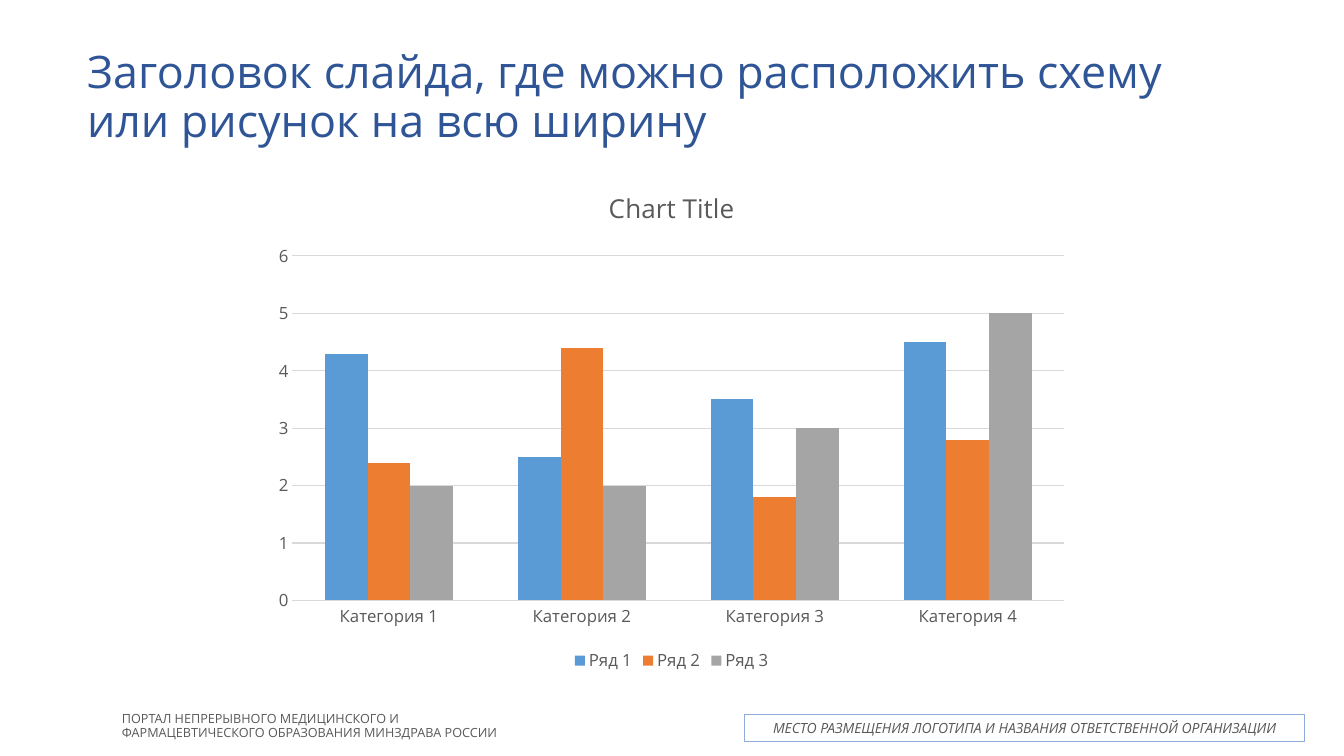
from dataclasses import dataclass

from pptx import Presentation
from pptx import util as u
from pptx.chart import data as chart_data
from pptx.dml import color
from pptx.enum import chart as ch, shapes, text


@dataclass(frozen=True)
class Theme:
    font: str = "Open Sans"
    heading: str = "2F5597"
    muted: str = "595959"
    border: str = "8FAADC"
    grid: str = "D9D9D9"
    series: tuple = ("5B9BD5", "ED7D31", "A5A5A5")
    title_size: float = 32
    chart_title_size: float = 18.6
    label_size: float = 12
    logo_size: float = 10
    portal_size: float = 9
    line_width: float = 0.75


THEME = Theme()


def rgb(value):
    return color.RGBColor.from_string(value)


def apply(target, values):
    for name, value in values.items():
        setattr(target, name, value)


def style_font(font, size, shade, **extra):
    apply(font, {"name": THEME.font, "size": u.Pt(size), **extra})
    font.color.rgb = rgb(shade)


def place(shape, box):
    names = ("left", "top", "width", "height")
    apply(shape, {name: u.Pt(value) for name, value in zip(names, box)})


def write(shape, content, size, shade, align, anchor, spacing=1.0, **extra):
    frame = shape.text_frame
    apply(frame, {"word_wrap": True, "auto_size": text.MSO_AUTO_SIZE.NONE,
                  "vertical_anchor": anchor})
    para = frame.paragraphs[0]
    apply(para, {"alignment": align, "line_spacing": spacing})
    span = para.add_run()
    span.text = content
    style_font(span.font, size, shade, **extra)


def add_title(page, box, content):
    title = page.shapes.title
    place(title, box)
    write(title, content, THEME.title_size, THEME.heading,
          text.PP_ALIGN.LEFT, text.MSO_ANCHOR.MIDDLE, 0.9)


def add_column_chart(page, box, title, categories, series):
    data = chart_data.CategoryChartData()
    data.categories = categories
    for name, values in series.items():
        data.add_series(name, values)
    chart = page.shapes.add_chart(
        ch.XL_CHART_TYPE.COLUMN_CLUSTERED, *map(u.Pt, box), data).chart
    style_font(chart.font, THEME.label_size, THEME.muted)

    chart.has_title = True
    chart.chart_title.include_in_layout = False
    span = chart.chart_title.text_frame.paragraphs[0].add_run()
    span.text = title
    style_font(span.font, THEME.chart_title_size, THEME.muted, bold=False)

    chart.has_legend = True
    apply(chart.legend, {"position": ch.XL_LEGEND_POSITION.BOTTOM,
                         "include_in_layout": False})
    style_font(chart.legend.font, THEME.label_size, THEME.muted)

    for axis in (chart.category_axis, chart.value_axis):
        apply(axis, {"major_tick_mark": ch.XL_TICK_MARK.NONE,
                     "minor_tick_mark": ch.XL_TICK_MARK.NONE})
        axis.format.line.fill.background()
        style_font(axis.tick_labels.font, THEME.label_size, THEME.muted)
    apply(chart.value_axis, {"minimum_scale": 0, "maximum_scale": 6,
                             "major_unit": 1, "has_major_gridlines": True})
    grid = chart.value_axis.major_gridlines.format.line
    grid.color.rgb = rgb(THEME.grid)
    grid.width = u.Pt(THEME.line_width)

    plot = chart.plots[0]
    apply(plot, {"gap_width": 150, "overlap": 0, "vary_by_categories": False})
    for bars, shade in zip(plot.series, THEME.series):
        bars.invert_if_negative = False
        bars.format.fill.solid()
        bars.format.fill.fore_color.rgb = rgb(shade)


def add_footer(page, box, portal, organisation):
    left, top, width, height = box
    portal_box = page.shapes.add_textbox(
        *map(u.Pt, (left, top, 311, height)))
    write(portal_box, portal, THEME.portal_size, THEME.muted,
          text.PP_ALIGN.LEFT, text.MSO_ANCHOR.TOP, 0.9)

    logo_width, logo_height = 400.5, 19.5
    logo_box = page.shapes.add_shape(
        shapes.MSO_SHAPE.RECTANGLE,
        *map(u.Pt, (left + width - logo_width, top + 5,
                    logo_width, logo_height)))
    logo_box.shadow.inherit = False
    logo_box.fill.background()
    logo_box.line.color.rgb = rgb(THEME.border)
    logo_box.line.width = u.Pt(THEME.line_width)
    write(logo_box, organisation, THEME.logo_size, THEME.muted,
          text.PP_ALIGN.CENTER, text.MSO_ANCHOR.MIDDLE, italic=True)


def main():
    deck = Presentation()
    apply(deck, {"slide_width": u.Pt(960), "slide_height": u.Pt(540)})
    page = deck.slides.add_slide(deck.slide_layouts[5])

    add_footer(page, (80, 505.5, 852, 29),
               "ПОРТАЛ НЕПРЕРЫВНОГО МЕДИЦИНСКОГО И "
               "ФАРМАЦЕВТИЧЕСКОГО ОБРАЗОВАНИЯ МИНЗДРАВА РОССИИ",
               "МЕСТО РАЗМЕЩЕНИЯ ЛОГОТИПА И НАЗВАНИЯ "
               "ОТВЕТСТВЕННОЙ ОРГАНИЗАЦИИ")
    add_title(page, (55, 21.5, 850, 98),
              "Заголовок слайда, где можно расположить схему "
              "или рисунок на всю ширину")
    add_column_chart(page, (187.5, 119.5, 584.5, 363.5), "Chart Title",
                     [f"Категория {n}" for n in range(1, 5)],
                     {"Ряд 1": (4.3, 2.5, 3.5, 4.5),
                      "Ряд 2": (2.4, 4.4, 1.8, 2.8),
                      "Ряд 3": (2, 2, 3, 5)})
    deck.save("out.pptx")


if __name__ == "__main__":
    main()
